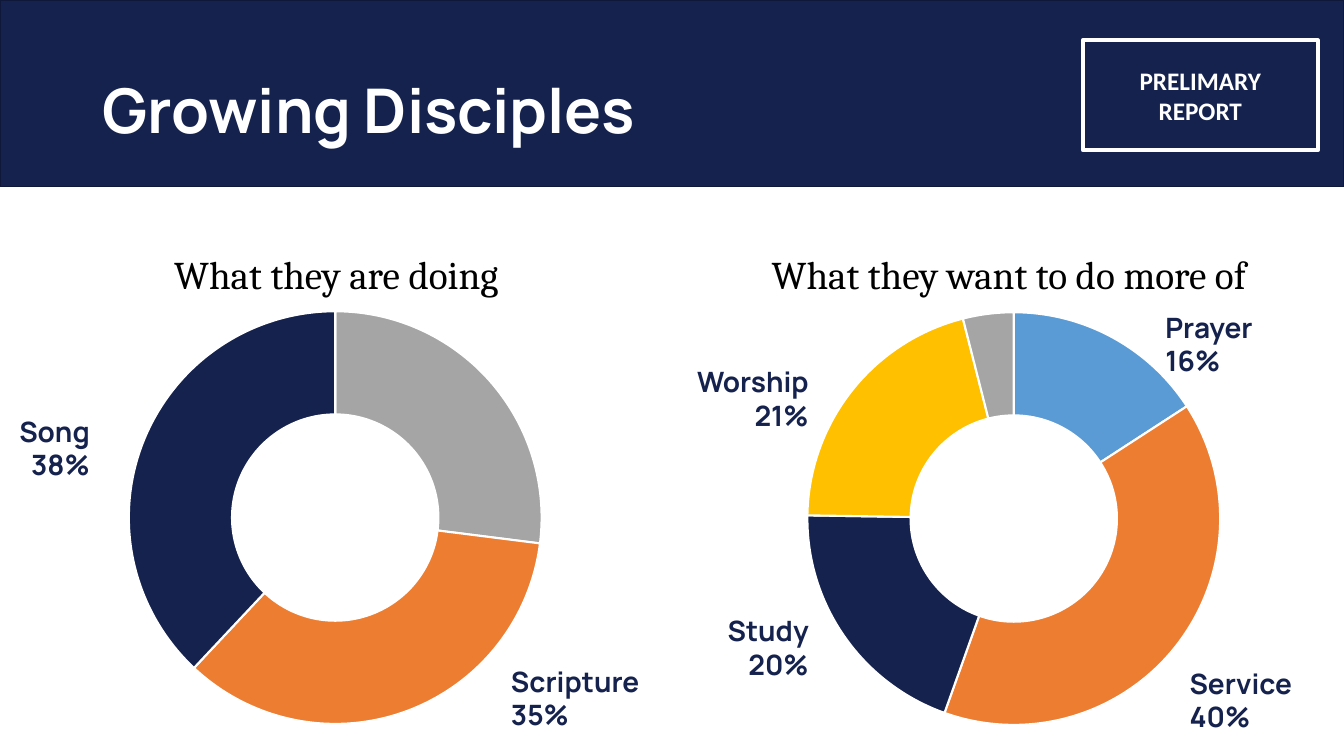
import pptx
import pptx.chart.data
import pptx.dml.color
import pptx.enum.chart
import pptx.enum.shapes
import pptx.enum.text
import pptx.util
from pptx.util import Inches

NAVY, ORANGE, GREY = "15224D", "ED7D31", "A5A5A5"
BLUE, GOLD, WHITE, BLACK = "5B9BD5", "FFC000", "FFFFFF", "000000"
LEFT = pptx.enum.text.PP_ALIGN.LEFT
CENTER = pptx.enum.text.PP_ALIGN.CENTER
RIGHT = pptx.enum.text.PP_ALIGN.RIGHT

TITLE = "Growing Disciples"
STAMP = ["PRELIMARY", "REPORT"]
PANELS = [
    {
        "heading": "What they are doing",
        "heading_left": 0,
        "chart_at": (0.05, 2.95),
        "slices": [(27, GREY), (35, ORANGE), (38, NAVY)],
        "labels": [
            ("Song", "38%", -0.64, 4.06, RIGHT),
            ("Scripture", "35%", 4.97, 6.54, LEFT),
        ],
    },
    {
        "heading": "What they want to do more of",
        "heading_left": 6.67,
        "chart_at": (6.78, 2.96),
        "slices": [(16, BLUE), (40, ORANGE), (20, NAVY), (21, GOLD), (4, GREY)],
        "labels": [
            ("Prayer", "16%", 11.46, 3.03, LEFT),
            ("Service", "40%", 11.7, 6.56, LEFT),
            ("Study", "20%", 6.49, 6.04, RIGHT),
            ("Worship", "21%", 6.49, 3.57, RIGHT),
        ],
    },
]
CHART_SIZE = (6.55, 4.37)
LABEL_SIZE = (1.63, 0.77)
HEADING_TOP, HEADING_SIZE = 1.97, (6.67, 0.93)
HOLE_PERCENT = 75


def color(value):
    return pptx.dml.color.RGBColor.from_string(value)


def write(shape, lines, font, size, text_color, align, bold=False, spacing=None,
          anchor=pptx.enum.text.MSO_ANCHOR.TOP):
    frame = shape.text_frame
    frame.word_wrap = True
    frame.vertical_anchor = anchor
    frame.text = "\n".join(lines)
    for paragraph in frame.paragraphs:
        paragraph.alignment = align
        paragraph.font.name = font
        paragraph.font.size = pptx.util.Pt(size)
        paragraph.font.bold = bold
        paragraph.font.color.rgb = color(text_color)
        if spacing:
            paragraph.line_spacing = spacing


def add_text(slide, box, *args, **options):
    shape = slide.shapes.add_textbox(*map(Inches, box))
    write(shape, *args, **options)


def add_rectangle(slide, box, line_color, line_width, fill=None):
    shape = slide.shapes.add_shape(
        pptx.enum.shapes.MSO_SHAPE.RECTANGLE, *map(Inches, box))
    shape.shadow.inherit = False
    if fill:
        shape.fill.solid()
        shape.fill.fore_color.rgb = color(fill)
    else:
        shape.fill.background()
    shape.line.color.rgb = color(line_color)
    shape.line.width = pptx.util.Pt(line_width)
    return shape


def add_doughnut(slide, box, slices):
    data = pptx.chart.data.CategoryChartData()
    data.categories = [str(number) for number in range(1, len(slices) + 1)]
    data.add_series("Series 1", [value for value, _ in slices])
    chart = slide.shapes.add_chart(
        pptx.enum.chart.XL_CHART_TYPE.DOUGHNUT, *map(Inches, box), data).chart
    chart.has_title = False
    chart.has_legend = False
    chart.font.name = "Calibri"
    chart.font.size = pptx.util.Pt(10)
    chart.font.color.rgb = color(BLACK)
    plot = chart.plots[0]
    plot.vary_by_categories = True
    for hole in chart.element.xpath(".//c:holeSize"):
        hole.set("val", str(HOLE_PERCENT))
    for index, (_, fill) in enumerate(slices):
        point = plot.series[0].points[index]
        point.format.fill.solid()
        point.format.fill.fore_color.rgb = color(fill)
        point.format.line.color.rgb = color(WHITE)
        point.format.line.width = pptx.util.Pt(1.5)


def main():
    presentation = pptx.Presentation()
    presentation.slide_width = Inches(13.33)
    presentation.slide_height = Inches(7.5)
    slide = presentation.slides.add_slide(presentation.slide_layouts[6])
    middle = pptx.enum.text.MSO_ANCHOR.MIDDLE

    add_rectangle(slide, (0, 0, 13.33, 1.85), "101839", 1, NAVY)
    stamp = add_rectangle(slide, (10.74, 0.4, 2.33, 1.09), WHITE, 3)
    write(stamp, STAMP, "Calibri", 18, WHITE, CENTER, bold=True, anchor=middle)
    add_text(slide, (0.92, 0.4, 9.83, 1.45), [TITLE], "Manrope", 44, WHITE, LEFT,
             bold=True, spacing=0.9, anchor=middle)

    for panel in PANELS:
        add_doughnut(slide, panel["chart_at"] + CHART_SIZE, panel["slices"])
        add_text(slide, (panel["heading_left"], HEADING_TOP) + HEADING_SIZE,
                 [panel["heading"]], "Cambria", 28, BLACK, CENTER, spacing=2.0)
        for name, share, left, top, align in panel["labels"]:
            add_text(slide, (left, top) + LABEL_SIZE, [name, share],
                     "Manrope", 20, NAVY, align, bold=True)

    presentation.save("out.pptx")


if __name__ == "__main__":
    main()
